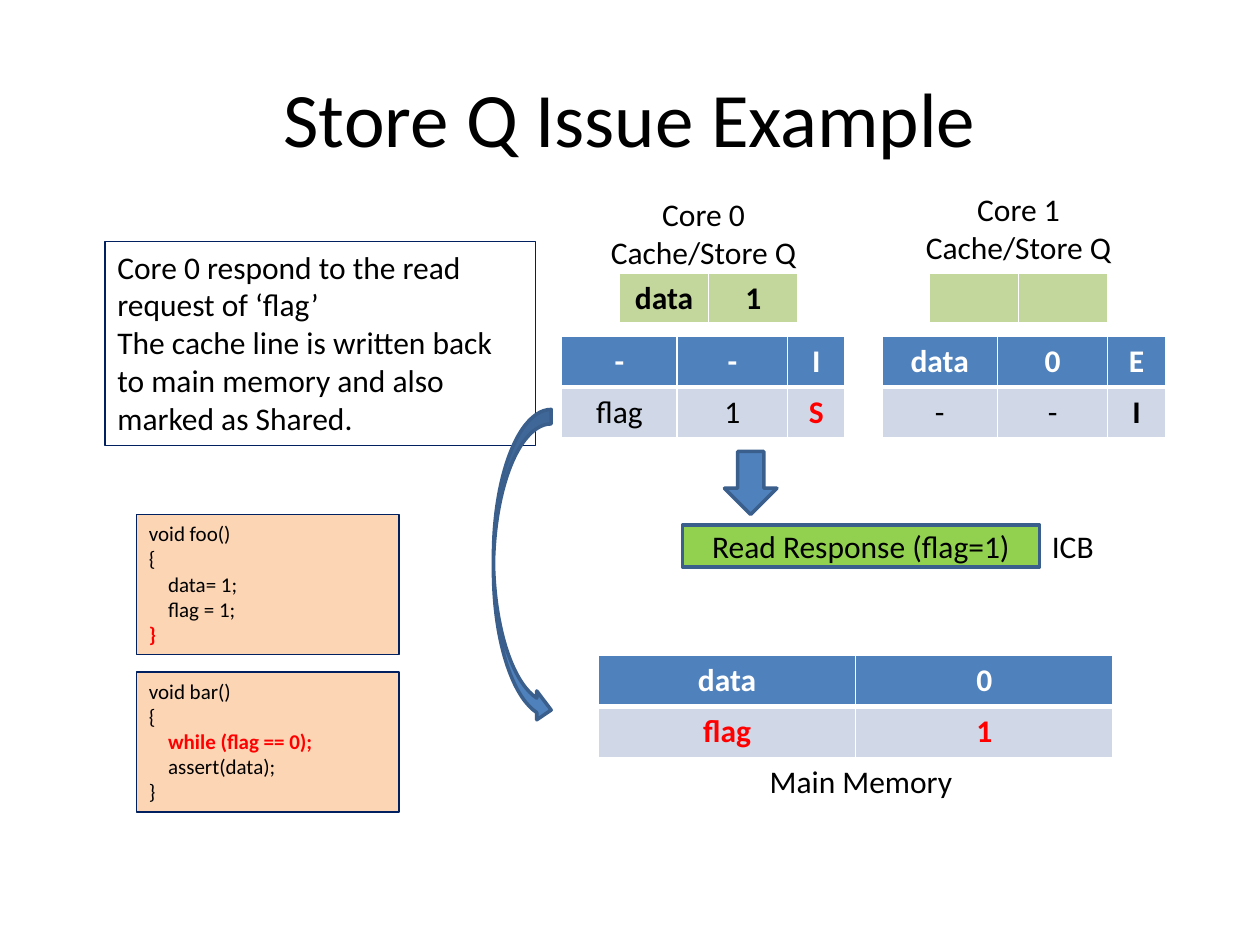
from dataclasses import dataclass

from lxml import etree
from pptx import Presentation
from pptx.dml.color import RGBColor
from pptx.enum import shapes, text
from pptx.oxml import ns
from pptx.util import Pt

Box = tuple[float, float, float, float]


@dataclass(frozen=True)
class Theme:
    font: str = "Calibri"
    title: int = 44
    body: int = 18
    code: int = 12
    black: str = "000000"
    white: str = "FFFFFF"
    red: str = "FF0000"
    navy: str = "002060"
    blue: str = "4F81BD"
    edge: str = "3A5F8C"
    pale: str = "D0D8E8"
    peach: str = "FCD5B5"
    green: str = "92D050"
    olive: str = "C3D69B"


T = Theme()
ROW = 29.2
CACHE = (66, 63, 33)
QUEUE = (51, 51)
MEMORY = (147, 147)


@dataclass(frozen=True)
class Line:
    words: str
    color: str = T.black
    bold: bool = False
    indent: float = 0


@dataclass(frozen=True)
class Panel:
    box: Box
    lines: tuple[Line, ...]
    size: int = T.body
    center: bool = False
    middle: bool = False
    wrap: bool = True
    fill: str | None = None
    edge: str | None = None
    weight: float = 0.75


@dataclass(frozen=True)
class Grid:
    left: float
    top: float
    cols: tuple[float, ...]
    rows: tuple[tuple[Line, ...], ...]
    fills: tuple[str, ...] = (T.blue, T.pale)


def head(words: str) -> Line:
    return Line(words, T.white, True)


def hot(words: str, indent: float = 0) -> Line:
    return Line(words, T.red, True, indent)


def step(words: str) -> Line:
    return Line(words, indent=11)


def write(frame, lines: tuple[Line, ...], size: int, center: bool) -> None:
    for i, line in enumerate(lines):
        para = frame.add_paragraph() if i else frame.paragraphs[0]
        para.text = line.words
        para.alignment = text.PP_ALIGN.CENTER if center else text.PP_ALIGN.LEFT
        para.font.name, para.font.size = T.font, Pt(size)
        para.font.bold = line.bold
        para.font.color.rgb = RGBColor.from_string(line.color)
        if line.indent:
            para._p.get_or_add_pPr().set("marL", str(Pt(line.indent)))


def paint(shape, fill: str | None, edge: str, weight: float) -> None:
    shape.shadow.inherit = False
    if fill:
        shape.fill.solid()
        shape.fill.fore_color.rgb = RGBColor.from_string(fill)
    else:
        shape.fill.background()
    shape.line.color.rgb = RGBColor.from_string(edge)
    shape.line.width = Pt(weight)


def draw_panel(slide, panel: Panel) -> None:
    shape = slide.shapes.add_textbox(*map(Pt, panel.box))
    if panel.edge:
        paint(shape, panel.fill, panel.edge, panel.weight)
    frame = shape.text_frame
    frame.word_wrap = panel.wrap
    anchor = text.MSO_ANCHOR
    frame.vertical_anchor = anchor.MIDDLE if panel.middle else anchor.TOP
    write(frame, panel.lines, panel.size, panel.center)


def draw_arrow(slide, kind: shapes.MSO_SHAPE, box: Box) -> None:
    shape = slide.shapes.add_shape(kind, *map(Pt, box))
    paint(shape, T.blue, T.edge, 2)


def rule(cell, side: str, weight: float) -> None:
    """Add a white border to one side of a cell."""
    props = cell._tc.get_or_add_tcPr()
    line = etree.SubElement(props, ns.qn(f"a:ln{side}"), w=str(Pt(weight)))
    fill = etree.SubElement(line, ns.qn("a:solidFill"))
    etree.SubElement(fill, ns.qn("a:srgbClr"), val=T.white)


def draw_grid(slide, grid: Grid) -> None:
    count = len(grid.rows)
    size = (sum(grid.cols), ROW * count)
    frame = slide.shapes.add_table(
        count, len(grid.cols), *map(Pt, (grid.left, grid.top, *size)))
    table = frame.table
    table.first_row = table.horz_banding = False
    for col, width in zip(table.columns, grid.cols):
        col.width = Pt(width)
    for r, row in enumerate(grid.rows):
        table.rows[r].height = Pt(ROW)
        for c, line in enumerate(row):
            cell = table.cell(r, c)
            for side in "LRT":
                rule(cell, side, 3 if side == "T" and r else 1)
            rule(cell, "B", 1 if r else 3)
            cell.fill.solid()
            cell.fill.fore_color.rgb = RGBColor.from_string(grid.fills[r])
            write(cell.text_frame, (line,), T.body, True)


PANELS = (
    Panel((36, 21.6, 648, 90), (Line("Store Q Issue Example"),),
          T.title, center=True, middle=True),
    Panel((78, 294, 150, 80), (
        Line("void foo()"), Line("{"), step("data= 1;"),
        step("flag = 1;"), hot("}")),
        T.code, fill=T.peach, edge=T.navy),
    Panel((78, 384, 150, 80), (
        Line("void bar()"), Line("{"), hot("while (flag == 0);", 11),
        step("assert(data);"), Line("}")),
        T.code, fill=T.peach, edge=T.navy),
    Panel((390, 300, 204, 24), (Line("Read Response (flag=1)"),),
          center=True, middle=True, fill=T.green, edge=T.edge, weight=2),
    Panel((594, 297.5, 39, 29), (Line("ICB"),), wrap=False),
    Panel((60, 138, 246, 116.5), (
        Line("Core 0 respond to the read request of ‘flag’"),
        Line("The cache line is written back to main memory "
             "and also marked as Shared.")), edge=T.navy),
    Panel((405, 432, 174, 29), (Line("Main Memory"),), center=True),
    Panel((336, 108, 132, 51), (Line("Core 0 Cache/Store Q"),), center=True),
    Panel((516, 105, 132, 51), (Line("Core 1 Cache/Store Q"),), center=True),
)

GRIDS = (
    Grid(321, 192, CACHE, (
        (head("-"), head("-"), head("I")),
        (Line("flag"), Line("1"), hot("S")))),
    Grid(504, 192, CACHE, (
        (head("data"), head("0"), head("E")),
        (Line("-"), Line("-"), Line("I", bold=True)))),
    Grid(342, 374.4, MEMORY, (
        (head("data"), head("0")),
        (hot("flag"), hot("1")))),
    Grid(354, 156, QUEUE, (
        (Line("data", bold=True), Line("1", bold=True)),), (T.olive,)),
    Grid(531, 156, QUEUE, ((Line(""), Line("")),), (T.olive,)),
)

ARROWS = (
    (shapes.MSO_SHAPE.DOWN_ARROW, (414, 258, 30, 36)),
    (shapes.MSO_SHAPE.CURVED_RIGHT_ARROW, (282, 234, 33, 180)),
)


def main() -> None:
    deck = Presentation()
    deck.slide_width, deck.slide_height = Pt(720), Pt(540)
    slide = deck.slides.add_slide(deck.slide_layouts[6])
    for panel in PANELS:
        draw_panel(slide, panel)
    for grid in GRIDS:
        draw_grid(slide, grid)
    for kind, box in ARROWS:
        draw_arrow(slide, kind, box)
    deck.save("out.pptx")


if __name__ == "__main__":
    main()
